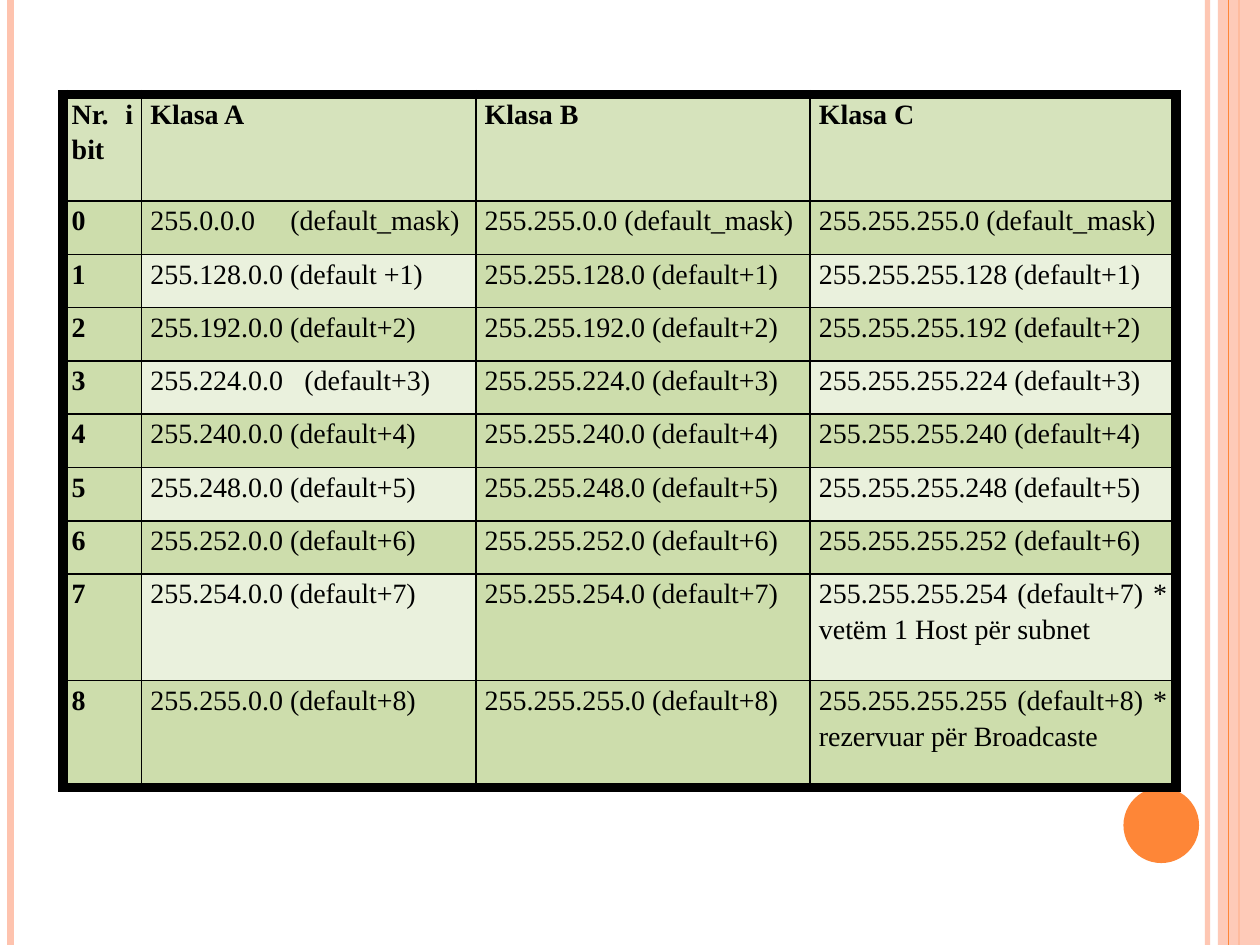
from lxml.etree import SubElement
from pptx import Presentation
from pptx.dml.color import RGBColor
from pptx.enum.shapes import MSO_CONNECTOR as Connector, MSO_SHAPE as Shape
from pptx.enum.text import PP_ALIGN as Align
from pptx.oxml import parse_xml
from pptx.oxml.ns import nsdecls, qn
from pptx.util import Pt

BLACK = RGBColor(0x00, 0x00, 0x00)
ORANGE = RGBColor(0xFE, 0x86, 0x37)
PEACH = RGBColor(0xFE, 0xC3, 0xAE)
HEADER_GREEN = RGBColor(0xD6, 0xE3, 0xBC)
GREEN = RGBColor(0xCD, 0xDD, 0xAC)
PALE_GREEN = RGBColor(0xEA, 0xF1, 0xDD)

WIDTH, HEIGHT = 720, 540
THICK, THIN = 6, 1
COLUMN_WIDTHS = [45, 191, 191, 209]
ROW_UNITS = [2] + [1] * 7 + [2, 2]
TABLE_TOP, TABLE_HEIGHT = 54, 396
HEADERS = ["Nr. i bit", "Klasa A", "Klasa B", "Klasa C"]
PREFIXES = ["255.{}.0.0", "255.255.{}.0", "255.255.255.{}"]
SPECIAL_CELLS = {
    (0, 1): "255.0.0.0\t(default_mask)",
    (1, 1): "255.128.0.0 (default +1)",
    (3, 1): "255.224.0.0\t(default+3)",
    (7, 3): "255.255.255.254 (default+7) * vetëm 1 Host për subnet",
    (8, 3): "255.255.255.255 (default+8) * rezervuar për Broadcaste",
}
TAB_STOPS = {(0, 1): 80, (3, 1): 88}


class SlideBuilder:
    font_name = "Times New Roman"
    font_size = 16
    line_spacing = 1.15
    side_margin = 5

    def __init__(self, slide):
        self.slide = slide

    def set_alpha(self, color_format_parent, percent):
        color = color_format_parent.find(".//" + qn("a:srgbClr"))
        SubElement(color, qn("a:alpha")).set("val", str(percent * 1000))

    def vertical_line(self, x, color, width, alpha=100):
        connector = self.slide.shapes.add_connector(
            Connector.STRAIGHT, Pt(x), Pt(0), Pt(x), Pt(HEIGHT))
        connector.line.color.rgb = color
        connector.line.width = Pt(width)
        properties = connector._element.spPr
        SubElement(properties, qn("a:effectLst"))
        if alpha < 100:
            self.set_alpha(properties, alpha)

    def filled_shape(self, kind, left, top, width, height, color, alpha=100):
        shape = self.slide.shapes.add_shape(
            kind, Pt(left), Pt(top), Pt(width), Pt(height))
        shape.shadow.inherit = False
        shape.fill.solid()
        shape.fill.fore_color.rgb = color
        shape.line.fill.background()
        if alpha < 100:
            self.set_alpha(shape._element.spPr, alpha)

    def cell_borders(self, cell, widths):
        properties = cell._tc.get_or_add_tcPr()
        for side, width in zip("LRTB", widths):
            properties.append(parse_xml(
                f'<a:ln{side} {nsdecls("a")} w="{Pt(width)}"><a:solidFill>'
                f'<a:srgbClr val="{BLACK}"/></a:solidFill></a:ln{side}>'))

    def cell(self, cell, text, color, bold, borders, tab_stop=None):
        cell.margin_left = cell.margin_right = Pt(self.side_margin)
        cell.margin_top = cell.margin_bottom = Pt(0)
        self.cell_borders(cell, borders)
        cell.fill.solid()
        cell.fill.fore_color.rgb = color
        paragraph = cell.text_frame.paragraphs[0]
        paragraph.add_run().text = text
        paragraph.alignment = Align.JUSTIFY
        paragraph.line_spacing = self.line_spacing
        if tab_stop:
            tabs = SubElement(paragraph._p.get_or_add_pPr(), qn("a:tabLst"))
            tab = SubElement(tabs, qn("a:tab"))
            tab.set("pos", str(Pt(tab_stop)))
            tab.set("algn", "l")
        paragraph.font.name = self.font_name
        paragraph.font.size = Pt(self.font_size)
        paragraph.font.bold = bold
        paragraph.font.color.rgb = BLACK

    def table(self, left, top, column_widths, row_heights, rows):
        last_row, last_column = len(row_heights) - 1, len(column_widths) - 1
        table = self.slide.shapes.add_table(
            last_row + 1, last_column + 1, Pt(left), Pt(top),
            Pt(sum(column_widths)), Pt(sum(row_heights))).table
        table.first_row = table.horz_banding = False
        for column, width in zip(table.columns, column_widths):
            column.width = Pt(width)
        for row, height in zip(table.rows, row_heights):
            row.height = Pt(height)
        for r, row in enumerate(rows):
            for c, text in enumerate(row):
                edges = [c == 0, c == last_column, r == 0, r == last_row]
                borders = [THICK if edge else THIN for edge in edges]
                self.cell(table.cell(r, c), text, cell_color(r, c),
                          r == 0 or c == 0, borders, TAB_STOPS.get((r - 1, c)))


def cell_color(row, column):
    if row == 0:
        return HEADER_GREEN
    return PALE_GREEN if row % 2 == 0 and column % 2 == 1 else GREEN


def mask_row(bits):
    octet = 256 - 2 ** (8 - bits)
    note = f"default+{bits}" if bits else "default_mask"
    row = [str(bits)] + [f"{prefix.format(octet)} ({note})" for prefix in PREFIXES]
    return [SPECIAL_CELLS.get((bits, c), text) for c, text in enumerate(row)]


def main():
    presentation = Presentation()
    presentation.slide_width, presentation.slide_height = Pt(WIDTH), Pt(HEIGHT)
    builder = SlideBuilder(
        presentation.slides.add_slide(presentation.slide_layouts[6]))

    builder.vertical_line(690, PEACH, 3, alpha=93)
    builder.vertical_line(6, PEACH, 4.5)
    builder.vertical_line(708, ORANGE, 1.5)
    builder.filled_shape(Shape.RECTANGLE, 696, 0, 24, HEIGHT, PEACH, alpha=87)
    builder.vertical_line(702, ORANGE, 0.75)
    builder.filled_shape(Shape.OVAL, 642, 450, 43.2, 43.2, ORANGE)

    unit = TABLE_HEIGHT / sum(ROW_UNITS)
    builder.table(36, TABLE_TOP, COLUMN_WIDTHS,
                  [unit * units for units in ROW_UNITS],
                  [HEADERS] + [mask_row(bits) for bits in range(9)])
    presentation.save("out.pptx")


if __name__ == "__main__":
    main()
